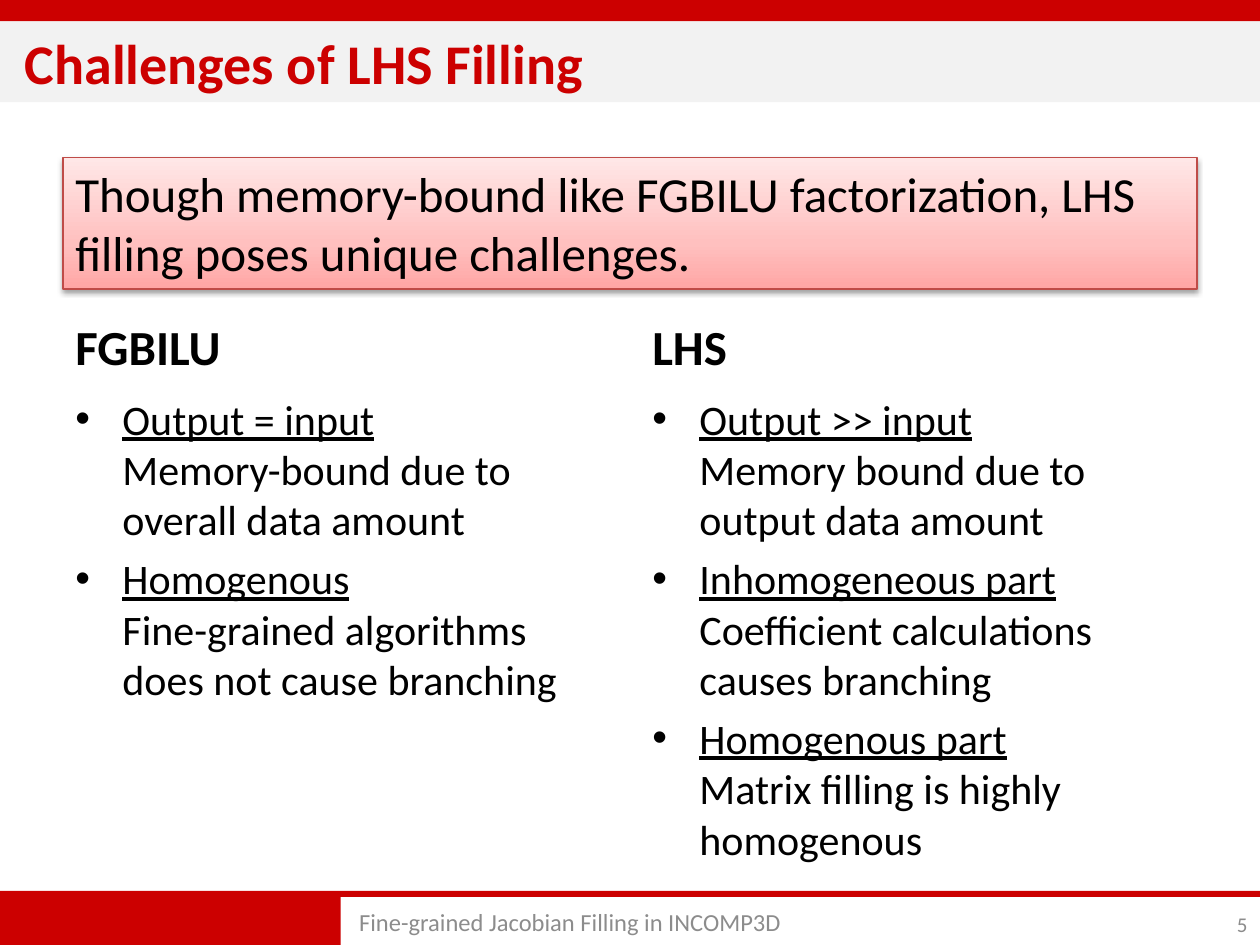
import pptx
import pptx.util
import pptx.oxml
import pptx.oxml.ns
import pptx.dml.color
import pptx.enum.shapes
import pptx.enum.text

Cm, Pt = pptx.util.Cm, pptx.util.Pt
Shape = pptx.enum.shapes.MSO_SHAPE
Align = pptx.enum.text.PP_ALIGN
Anchor = pptx.enum.text.MSO_ANCHOR

title = "Challenges of LHS Filling"
claim = "Though memory-bound like FGBILU factorization, LHS filling poses unique challenges."
columns = [
    ("FGBILU", [
        ("Output = input", "Memory-bound due to overall data amount"),
        ("Homogenous", "Fine-grained algorithms does not cause branching"),
    ]),
    ("LHS", [
        ("Output >> input", "Memory bound due to output data amount"),
        ("Inhomogeneous part", "Coefficient calculations causes branching"),
        ("Homogenous part", "Matrix filling is highly homogenous"),
    ]),
]
footer = "Fine-grained Jacobian Filling in INCOMP3D"
number = "5"

theme = {
    "font": "Calibri", "red": "CC0000", "band": "F2F2F2", "ink": "000000",
    "gray": "8C8C8C", "edge": "BF4C48",
    "stops": [(0, "FFA6A5"), (35, "FFC0BF"), (100, "FFE7E7")],
    "title": 32, "head": 28, "body": 24, "foot": 14, "page": 12,
}
wide, high, side = 25.4, 19.05, 1.27
col_wide = 11.23
col_step = wide - 2 * side - col_wide


def color(name):
    return pptx.dml.color.RGBColor.from_string(theme[name])


def style(para, size, ink="ink", bold=False):
    for run in para.runs:
        font = run.font
        font.name, font.size, font.bold = theme["font"], Pt(theme[size]), bold
        font.color.rgb = color(ink)


def place(shape, box):
    shape.left, shape.top, shape.width, shape.height = map(Cm, box)


def block(slide, kind, box, fill):
    shape = slide.shapes.add_shape(kind, *map(Cm, box))
    shape.shadow.inherit = False
    shape.fill.solid()
    shape.fill.fore_color.rgb = color(fill)
    shape.line.fill.background()
    return shape


def label(slide, box, text, size, ink="ink", bold=False, anchor=Anchor.MIDDLE, align=Align.LEFT):
    frame = slide.shapes.add_textbox(*map(Cm, box)).text_frame
    frame.word_wrap = True
    frame.vertical_anchor = anchor
    frame.text = text
    frame.paragraphs[0].alignment = align
    style(frame.paragraphs[0], size, ink, bold)


def bullets(slide, box, items):
    frame = slide.shapes.add_textbox(*map(Cm, box)).text_frame
    frame.word_wrap = True
    for i, (lead, rest) in enumerate(items):
        para = frame.paragraphs[0] if i == 0 else frame.add_paragraph()
        para.text = lead + "\v" + rest
        props = para._p.get_or_add_pPr()
        props.set("marL", str(Cm(0.95)))
        props.set("indent", str(-Cm(0.95)))
        if i:
            para.space_before = Pt(0.2 * theme["body"])
        for tag, key, value in (("buFont", "typeface", "Arial"), ("buChar", "char", "•")):
            mark = pptx.oxml.parse_xml(f'<a:{tag} {pptx.oxml.ns.nsdecls("a")} {key}="{value}"/>')
            props.append(mark)
        style(para, "body")
        para.runs[0].font.underline = True


def callout(slide, box, text):
    shape = block(slide, Shape.RECTANGLE, box, "band")
    shape.line.color.rgb = color("edge")
    shape.line.width = Pt(0.75)
    props = shape._element.spPr
    space = pptx.oxml.ns.nsdecls("a")
    stops = "".join(f'<a:gs pos="{at * 1000}"><a:srgbClr val="{tint}"/></a:gs>'
                    for at, tint in theme["stops"])
    grad = pptx.oxml.parse_xml(
        f'<a:gradFill {space} rotWithShape="1"><a:gsLst>{stops}</a:gsLst>'
        '<a:lin ang="16200000" scaled="0"/></a:gradFill>')
    props.replace(props.find(pptx.oxml.ns.qn("a:solidFill")), grad)
    glow = pptx.oxml.parse_xml(
        f'<a:effectLst {space}><a:outerShdw blurRad="{Pt(3.1)}" dist="{Pt(1.6)}" dir="5400000" '
        'rotWithShape="0"><a:srgbClr val="000000"><a:alpha val="38000"/></a:srgbClr>'
        '</a:outerShdw></a:effectLst>')
    props.replace(props.find(pptx.oxml.ns.qn("a:effectLst")), glow)
    frame = shape.text_frame
    frame.word_wrap = True
    frame.vertical_anchor = Anchor.TOP
    frame.text = text
    frame.paragraphs[0].alignment = Align.LEFT
    style(frame.paragraphs[0], "head")


def heading(slide):
    shape = slide.shapes.title
    place(shape, (0, 0.43, wide, 1.63))
    shape.fill.solid()
    shape.fill.fore_color.rgb = color("band")
    frame = shape.text_frame
    frame.text = title
    frame.auto_size = pptx.enum.text.MSO_AUTO_SIZE.NONE
    frame.vertical_anchor = Anchor.MIDDLE
    frame.margin_left = Cm(0.5)
    frame.paragraphs[0].alignment = Align.LEFT
    style(frame.paragraphs[0], "title", "red", True)


def main():
    deck = pptx.Presentation()
    deck.slide_width, deck.slide_height = Cm(wide), Cm(high)
    slide = deck.slides.add_slide(deck.slide_layouts[5])
    base = block(slide, Shape.CORNER, (0, 17.96, wide, 1.09), "red")
    base.adjustments[0], base.adjustments[1] = 0.11, 6.3
    base._element.spPr.xfrm.set("flipV", "1")
    block(slide, Shape.RECTANGLE, (0, 0, wide, 0.43), "red")
    heading(slide)
    for i, (head, items) in enumerate(columns):
        left = side + i * col_step
        label(slide, (left, 5.92, col_wide, 1.78), head, "head", bold=True, anchor=Anchor.BOTTOM)
        bullets(slide, (left, 7.8, col_wide, 10.2), items)
    label(slide, (6.99, 18.1, 14.17, 0.95), footer, "foot", "gray")
    label(slide, (23.92, 18.2, 1.48, 0.85), number, "page", "gray", align=Align.RIGHT)
    callout(slide, (side, 3.18, wide - 2 * side, 2.65), claim)
    deck.save("out.pptx")


if __name__ == "__main__":
    main()
